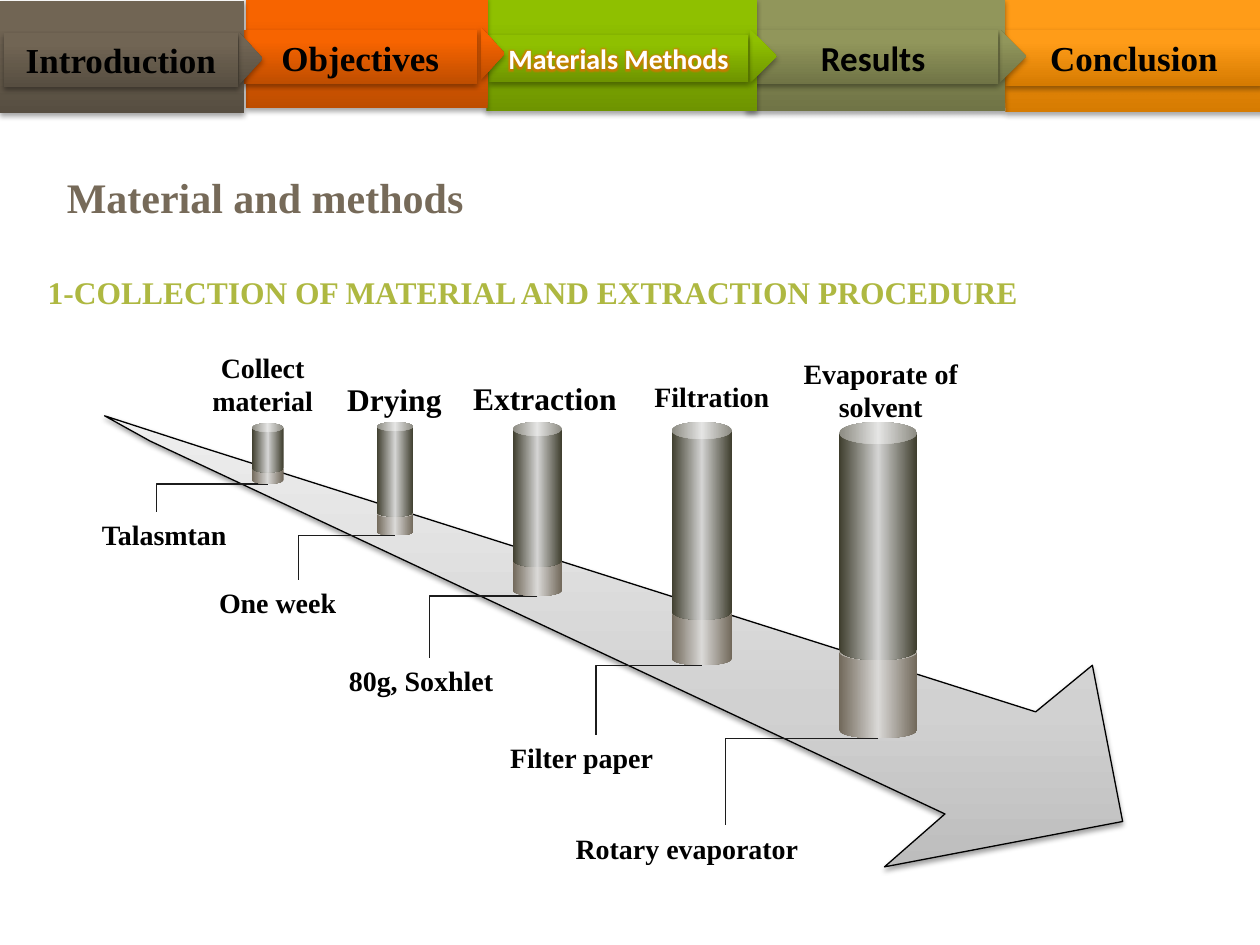
from dataclasses import dataclass

from lxml.etree import SubElement
from pptx import Presentation
from pptx.dml.color import RGBColor
from pptx.enum.shapes import MSO_CONNECTOR, MSO_SHAPE
from pptx.enum.text import MSO_ANCHOR, MSO_AUTO_SIZE, PP_ALIGN
from pptx.oxml.ns import qn
from pptx.util import Inches, Pt

COLUMNS, ROWS = 100, 75


@dataclass(frozen=True)
class Theme:
    serif: str = "Times New Roman"
    sans: str = "Calibri"
    title_size: int = 24
    banner_size: int = 20
    heading_size: int = 18
    label_size: int = 16
    title: str = "766A59"
    heading: str = "AEB841"
    ink: str = "000000"
    white: str = "FFFFFF"
    connector: str = "1C1C1C"
    glow: str = "F76400"
    arrow: tuple = ((0, "BDBDBD"), (35, "D1D1D1"), (100, "EEEEEE"))
    base: tuple = ((0, "71685A"), (50, "DAD9D7"), (100, "71685A"))
    column: tuple = ((0, "3E3D2D"), (50, "D4D4D3"), (100, "3E3D2D"))
    orange: tuple = ((0, "D67B01"), (80, "FF9C18"), (100, "FF9D19"))
    olive: tuple = ((0, "707446"), (80, "91965B"), (100, "93985A"))
    green: tuple = ((0, "6E9400"), (80, "8FC000"), (100, "90C100"))
    red: tuple = ((0, "BE4D00"), (80, "F76400"), (100, "F86400"))
    brown: tuple = ((0, "574E41"), (80, "716554"), (100, "726654"))


def set_values(target, values):
    for name, value in values.items():
        setattr(target, name, value)


def add_color(parent, color, opacity=None):
    node = SubElement(parent, qn("a:srgbClr"), val=color)
    if opacity is not None:
        SubElement(node, qn("a:alpha"), val=str(opacity * 1000))


class SlideBuilder:
    def __init__(self, presentation, theme):
        self.theme = theme
        self.cell_width = presentation.slide_width / COLUMNS
        self.cell_height = presentation.slide_height / ROWS
        self.slide = presentation.slides.add_slide(presentation.slide_layouts[5])

    def point(self, column, row):
        return round(column * self.cell_width), round(row * self.cell_height)

    def box(self, column, row, columns, rows):
        return self.point(column, row) + self.point(columns, rows)

    def fill_text(self, shape, text, size, color, font=None, align=PP_ALIGN.LEFT,
                  anchor=MSO_ANCHOR.TOP, wrap=True, indent=0):
        frame = shape.text_frame
        set_values(frame, {
            "text": text, "word_wrap": wrap, "vertical_anchor": anchor,
            "auto_size": MSO_AUTO_SIZE.NONE,
            "margin_left": Inches(0.1), "margin_right": Inches(0.1),
            "margin_top": Inches(0.05), "margin_bottom": Inches(0.05),
        })
        paragraph = frame.paragraphs[0]
        paragraph.alignment = align
        if indent:
            paragraph._p.get_or_add_pPr().set("marL", str(self.point(indent, 0)[0]))
        run = paragraph.runs[0]
        set_values(run.font, {"name": font or self.theme.serif,
                              "size": Pt(size), "bold": True})
        run.font.color.rgb = RGBColor.from_string(color)
        return run

    def title(self, text, bounds):
        shape = self.slide.shapes.title
        set_values(shape, dict(zip(("left", "top", "width", "height"), self.box(*bounds))))
        self.fill_text(shape, text, self.theme.title_size, self.theme.title, wrap=False)

    def text(self, text, bounds, size, color=None, **options):
        shape = self.slide.shapes.add_textbox(*self.box(*bounds))
        self.fill_text(shape, text, size, color or self.theme.ink, **options)

    def paint(self, shape, stops, angle, shadow=None):
        shape.fill.background()
        properties = shape._element.spPr
        empty_fill = properties.find(qn("a:noFill"))
        gradient = SubElement(properties, qn("a:gradFill"), rotWithShape="0")
        stop_list = SubElement(gradient, qn("a:gsLst"))
        for position, color in stops:
            add_color(SubElement(stop_list, qn("a:gs"), pos=str(position * 1000)), color)
        SubElement(gradient, qn("a:lin"), ang=str(angle * 60000), scaled="0")
        properties.replace(empty_fill, gradient)
        shape.line.fill.background()
        shape.shadow.inherit = False
        if shadow:
            opacity, distance = shadow
            outer = SubElement(properties.find(qn("a:effectLst")), qn("a:outerShdw"),
                               blurRad=str(Pt(3.1)), dist=str(Pt(distance)),
                               dir="5400000", rotWithShape="0")
            add_color(outer, self.theme.ink, opacity)

    def banner_shape(self, kind, bounds, stops):
        shape = self.slide.shapes.add_shape(kind, *self.box(*bounds))
        self.paint(shape, stops, 270, (35, 1.8))
        return shape

    def banner(self, text, stops, panel, label, pointer=None, font=None, active=False):
        self.banner_shape(MSO_SHAPE.RECTANGLE, panel, stops)
        if pointer:
            triangle = self.banner_shape(MSO_SHAPE.ISOSCELES_TRIANGLE, pointer, stops)
            triangle.rotation = 90
        shape = self.banner_shape(MSO_SHAPE.RECTANGLE, label, stops)
        theme = self.theme
        size, color = ((theme.label_size, theme.white) if active
                       else (theme.banner_size, theme.ink))
        run = self.fill_text(shape, text, size, color, font,
                             PP_ALIGN.CENTER, MSO_ANCHOR.MIDDLE)
        if active:
            properties = run._r.get_or_add_rPr()
            effects = SubElement(properties, qn("a:effectLst"))
            properties.find(qn("a:solidFill")).addnext(effects)
            glow = SubElement(effects, qn("a:glow"), rad=str(Pt(5)))
            add_color(glow, theme.glow, 60)

    def arrow(self, points):
        start, *rest = [self.point(*point) for point in points]
        builder = self.slide.shapes.build_freeform(*start)
        builder.add_line_segments(rest, close=True)
        shape = builder.convert_to_shape()
        self.paint(shape, self.theme.arrow, 270, (38, 1.6))
        self.outline(shape.line, self.theme.ink)

    def outline(self, line, color):
        line.width = Pt(0.75)
        line.fill.solid()
        line.fill.fore_color.rgb = RGBColor.from_string(color)

    def elbow(self, start, end):
        connector = self.slide.shapes.add_connector(
            MSO_CONNECTOR.ELBOW, *self.point(*start), *self.point(*end))
        properties = connector._element.spPr
        properties.find(qn("a:prstGeom")).set("prst", "bentConnector2")
        self.outline(connector.line, self.theme.connector)
        SubElement(properties, qn("a:effectLst"))

    def can(self, bounds, stops, curve):
        shape = self.slide.shapes.add_shape(MSO_SHAPE.CAN, *self.box(*bounds))
        shape.adjustments[0] = curve
        self.paint(shape, stops, 0)


def main():
    presentation = Presentation()
    set_values(presentation, {"slide_width": Inches(10), "slide_height": Inches(7.5)})
    theme = Theme()
    builder = SlideBuilder(presentation, theme)

    builder.title("Material and methods", (4.3, 13.1, 34.6, 5))
    builder.text("1-COLLECTION OF MATERIAL AND EXTRACTION PROCEDURE",
                 (2.8, 21.2, 79.5, 4), theme.heading_size, theme.heading)
    builder.arrow([(16, 35.5), (8.3, 33), (11.9, 35), (75, 64.6), (70.2, 68.8),
                   (89.1, 65.2), (86.7, 52.8), (82.2, 56.5)])

    small, large = theme.label_size, theme.heading_size
    headings = [
        ("Collect material", (14.2, 27.3, 13.3, 6.4), small),
        ("Drying", (26.3, 29.7, 10, 4), large),
        ("Extraction", (36.3, 29.6, 13.9, 4), large),
        ("Filtration", (50.7, 29.6, 11.6, 3.7), small),
        ("Evaporate of solvent", (61.5, 27.8, 16.8, 6.4), small),
    ]
    for text, bounds, size in headings:
        builder.text(text, bounds, size, align=PP_ALIGN.CENTER)

    details = [
        ("Talasmtan", 4.3, 40.6, 16.2, 2.8),
        ("One week", 10.3, 46, 26.8, 6.1),
        ("80g, Soxhlet", 20.7, 52.2, 26.8, 6),
        ("Filter paper", 33.9, 58.3, 26.8, 5.6),
        ("Rotary evaporator", 44.2, 65.5, 26.8, 0.5),
    ]
    for text, column, row, columns, indent in details:
        builder.text(text, (column, row, columns, 3.7), small, indent=indent)

    stages = [
        (20, 2.5, 33.6, 37.5, 36.9, 38.4, 0.27, 0.4, 12.4),
        (29.9, 2.9, 33.5, 41, 40.5, 42.5, 0.24, 0.27, 23.7),
        (40.7, 3.9, 33.5, 45, 43.9, 47.3, 0.28, 0.25, 34.1),
        (53.3, 4.8, 33.5, 49.2, 48.1, 52.8, 0.28, 0.22, 47.3),
        (66.6, 6.2, 33.5, 52.4, 51.1, 58.6, 0.28, 0.21, 57.6),
    ]
    for (left, width, top, column_end, base_top, base_end,
         column_curve, base_curve, elbow_left), detail in zip(stages, details):
        builder.elbow((left + width / 2, base_end), (elbow_left, detail[2]))
        builder.can((left, base_top, width, base_end - base_top), theme.base, base_curve)
        builder.can((left, top, width, column_end - top), theme.column, column_curve)

    builder.banner("Conclusion", theme.orange, (79.8, 0, 20.5, 8.9), (79.8, 2.4, 20.4, 4.4))
    builder.banner("Results", theme.olive, (59.2, -0.1, 20.6, 8.9), (59.4, 2.4, 19.8, 4.3),
                   (78.3, 3.4, 4.2, 2.1), theme.sans)
    builder.banner("Materials Methods", theme.green, (38.6, -0.1, 21.5, 8.9),
                   (38.8, 2.8, 20.6, 3.7), (58.5, 3.4, 4.2, 2.1), theme.sans, True)
    builder.banner("Objectives", theme.red, (19.5, -0.3, 19.2, 8.9), (19.3, 2.4, 18.6, 4.3),
                   (37, 3.3, 4.2, 1.9))
    builder.banner("Introduction", theme.brown, (0, 0.1, 19.4, 8.9), (0.3, 2.6, 18.6, 4.3),
                   (17.8, 3.7, 4.2, 1.9))
    presentation.save("out.pptx")


if __name__ == "__main__":
    main()
